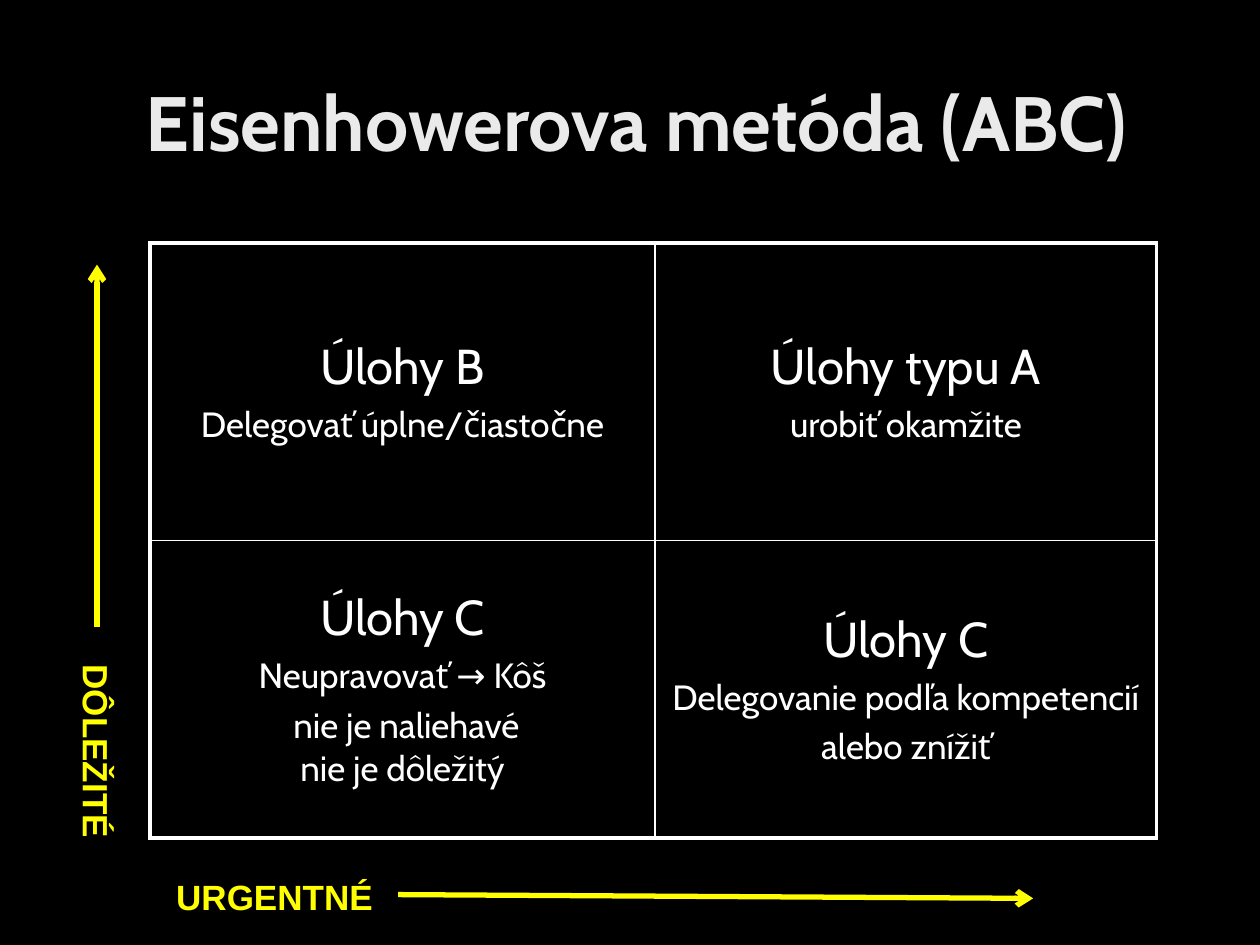
from lxml.etree import SubElement as Sub
from pptx import Presentation
from pptx.dml.color import RGBColor as RGB
from pptx.enum.shapes import MSO_CONNECTOR as Connector
from pptx.enum.text import MSO_ANCHOR as Anchor, PP_ALIGN as Align
from pptx.oxml import parse_xml
from pptx.oxml.ns import nsdecls, qn
from pptx.util import Inches, Pt

COLORS = {"background": "000000", "title": "EAEAEA", "grid": "FFFFFF", "axis": "FFFF00"}
OUTER, INNER = 2.25, 1

TASKS = [
    [["Úlohy B", "Delegovať úplne/čiastočne"],
     ["Úlohy typu A", "urobiť okamžite"]],
    [["Úlohy C", "Neupravovať → Kôš", " nie je naliehavé\vnie je dôležitý"],
     ["Úlohy C", "Delegovanie podľa kompetencií", "alebo znížiť"]],
]


class MatrixSlide:
    heading_font, axis_font = "Cabin", "Arial"

    def __init__(self, prs):
        self.slide = prs.slides.add_slide(prs.slide_layouts[6])
        fill = self.slide.background.fill
        fill.solid()
        fill.fore_color.rgb = RGB.from_string(COLORS["background"])

    def format_paragraph(self, paragraph, size, font, color, bold=False, before=0):
        """Format every run; before is the space above in percent of a line."""
        if before:
            spacing = Sub(paragraph._p.get_or_add_pPr(), qn("a:spcBef"))
            Sub(spacing, qn("a:spcPct"), val=str(before * 1000))
        for run in paragraph.runs:
            run.font.size, run.font.name, run.font.bold = Pt(size), font, bold
            run.font.color.rgb = RGB.from_string(COLORS[color])

    def text_box(self, text, left, top, width, height):
        box = self.slide.shapes.add_textbox(*map(Inches, (left, top, width, height)))
        box.text_frame.word_wrap = True
        box.text_frame.text = text
        return box

    def title(self, text, *place):
        frame = self.text_box(text, *place).text_frame
        frame.vertical_anchor = Anchor.MIDDLE
        self.format_paragraph(frame.paragraphs[0], 44, self.heading_font, "title", True)

    def axis_label(self, text, *place, rotation=0):
        label = self.text_box(text, *place)
        label.rotation = rotation
        self.format_paragraph(label.text_frame.paragraphs[0], 20, self.axis_font,
                              "axis", True, before=50)

    def axis_arrow(self, *ends):
        arrow = self.slide.shapes.add_connector(Connector.STRAIGHT, *map(Inches, ends))
        arrow.line.color.rgb = RGB.from_string(COLORS["axis"])
        arrow.line.width = Pt(3)
        Sub(arrow.line._get_or_add_ln(), qn("a:tailEnd"), type="arrow")
        Sub(arrow._element.spPr, qn("a:effectLst"))

    def cell_borders(self, cell, widths):
        """Draw the left, right, top and bottom borders, in that order."""
        properties = cell._tc.get_or_add_tcPr()
        for index, (side, width) in enumerate(zip("LRTB", widths)):
            properties.insert(index, parse_xml(
                f'<a:ln{side} {nsdecls("a")} w="{Pt(width)}"><a:solidFill>'
                f'<a:srgbClr val="{COLORS["grid"]}"/></a:solidFill></a:ln{side}>'))

    def matrix(self, tasks, left, top, column_widths, row_height):
        rows, columns = len(tasks), len(column_widths)
        table = self.slide.shapes.add_table(
            rows, columns, Inches(left), Inches(top),
            Inches(sum(column_widths)), Inches(row_height * rows)).table
        table.first_row = table.horz_banding = False
        for column, width in zip(table.columns, column_widths):
            column.width = Inches(width)
        for r, row in enumerate(tasks):
            for c, lines in enumerate(row):
                cell = table.cell(r, c)
                cell.fill.background()
                cell.vertical_anchor = Anchor.MIDDLE
                at_edge = (c == 0, c == columns - 1, r == 0, r == rows - 1)
                self.cell_borders(cell, [OUTER if edge else INNER for edge in at_edge])
                self.cell_text(cell.text_frame, lines)

    def cell_text(self, frame, lines):
        for index, line in enumerate(lines):
            paragraph = frame.add_paragraph() if index else frame.paragraphs[0]
            paragraph.text = line
            paragraph.alignment = Align.CENTER
            self.format_paragraph(paragraph, 20 if index else 28,
                                  self.heading_font, "grid", before=20)


def main():
    prs = Presentation()
    prs.slide_width, prs.slide_height = Inches(10), Inches(7.5)
    page = MatrixSlide(prs)
    page.title("Eisenhowerova metóda (ABC)", 1.06, 0.17, 8.5, 1.57)
    page.matrix(TASKS, 1.19, 1.93, [4.01, 3.98], 2.36)
    page.axis_label("URGENTNÉ", 1.3, 6.9, 1.94, 0.44)
    page.axis_label("DÔLEŽITÉ", -0.04, 5.76, 1.61, 0.44, rotation=90)
    page.axis_arrow(3.16, 7.1, 8.2, 7.13)
    page.axis_arrow(0.77, 4.98, 0.77, 2.1)
    prs.save("out.pptx")


if __name__ == "__main__":
    main()
